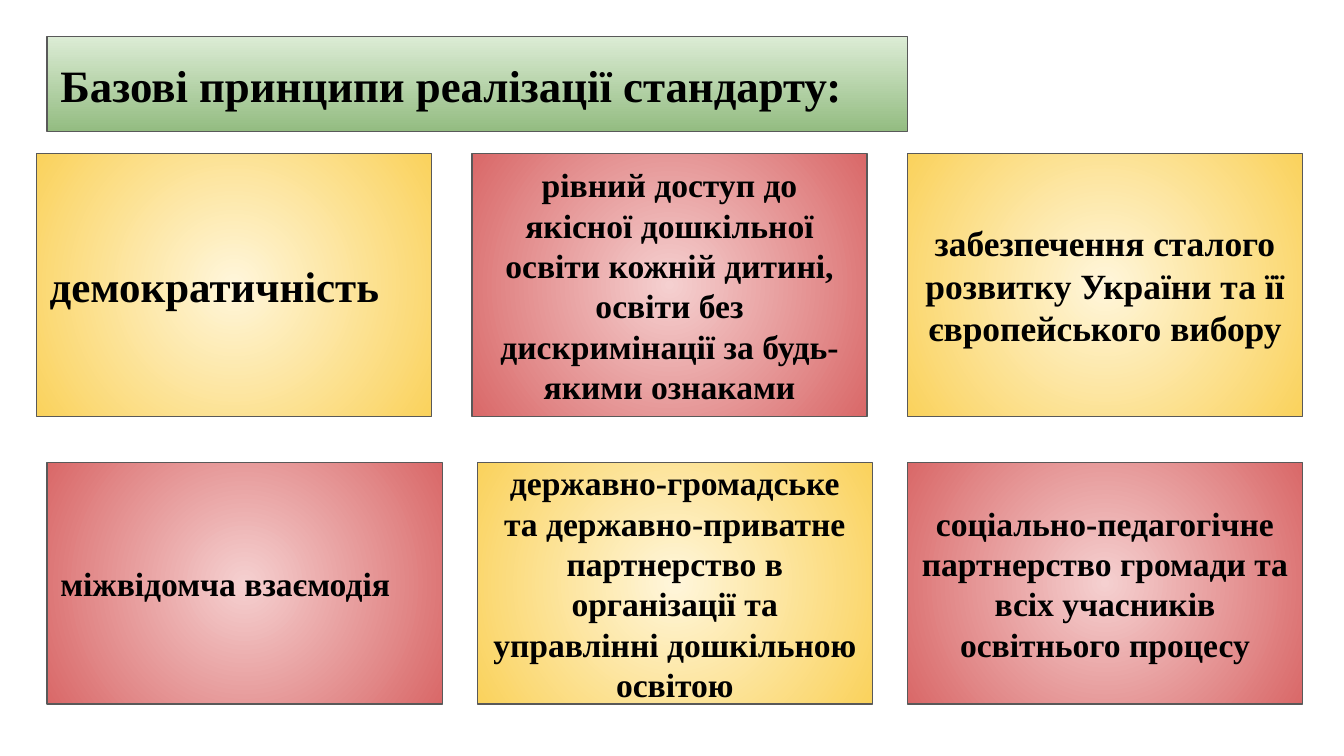
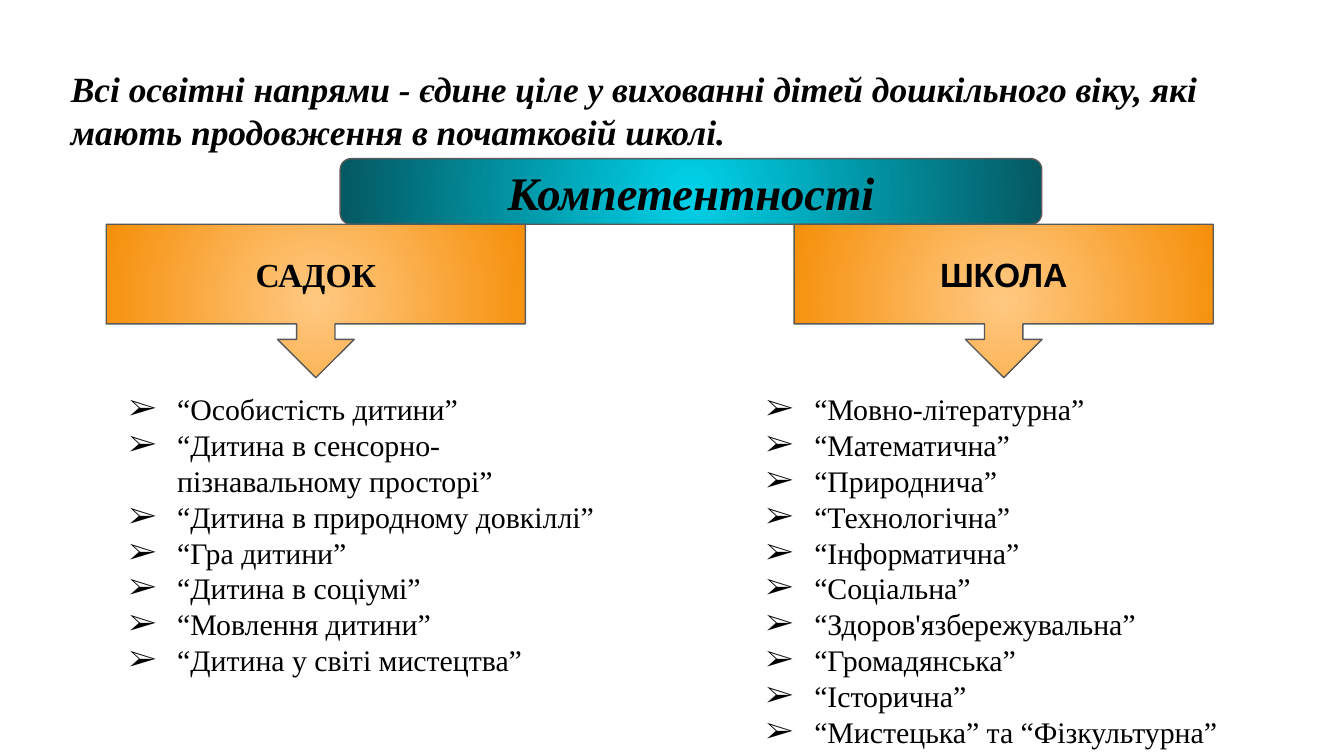
from dataclasses import dataclass

from lxml import etree
from pptx import Presentation
from pptx.dml.color import RGBColor
from pptx.enum.shapes import MSO_SHAPE
from pptx.enum.text import MSO_ANCHOR, MSO_AUTO_SIZE, PP_ALIGN
from pptx.oxml.ns import qn
from pptx.util import Cm, Pt

RECTANGLE = MSO_SHAPE.RECTANGLE
ROUNDED = MSO_SHAPE.ROUNDED_RECTANGLE
CALLOUT = MSO_SHAPE.DOWN_ARROW_CALLOUT
LEFT, CENTER = PP_ALIGN.LEFT, PP_ALIGN.CENTER
TOP, MIDDLE = MSO_ANCHOR.TOP, MSO_ANCHOR.MIDDLE
FIXED, GROW = MSO_AUTO_SIZE.NONE, MSO_AUTO_SIZE.SHAPE_TO_FIT_TEXT

SERIF, SANS = "Times New Roman", "Arial"
BLACK = RGBColor(0x00, 0x00, 0x00)
OUTLINE = RGBColor(0x59, 0x59, 0x59)
TITLE_ONLY = 5
INSET = Cm(0.25)


@dataclass(frozen=True)
class Gradient:
    start: RGBColor
    end: RGBColor
    radial: bool = True


GREEN = Gradient(RGBColor(0xDC, 0xEC, 0xD5), RGBColor(0x93, 0xBC, 0x81), radial=False)
YELLOW = Gradient(RGBColor(0xFF, 0xF6, 0xDB), RGBColor(0xFA, 0xD2, 0x5C))
RED = Gradient(RGBColor(0xF5, 0xD0, 0xD0), RGBColor(0xD9, 0x68, 0x68))
TEAL = Gradient(RGBColor(0x00, 0xD2, 0xE9), RGBColor(0x04, 0x59, 0x62))
ORANGE = Gradient(RGBColor(0xFF, 0xC9, 0x82), RGBColor(0xF5, 0x8F, 0x09))


@dataclass(frozen=True)
class Frame:
    """Position and size in centimetres."""
    left: float
    top: float
    width: float
    height: float

    def lengths(self) -> tuple:
        return Cm(self.left), Cm(self.top), Cm(self.width), Cm(self.height)


@dataclass(frozen=True)
class TextStyle:
    size: float
    font: str = SERIF
    bold: bool = True
    italic: bool = False
    align: PP_ALIGN = CENTER


@dataclass(frozen=True)
class Principle:
    text: str
    size: float = 18
    align: PP_ALIGN = CENTER


@dataclass(frozen=True)
class PrincipleRow:
    left: float
    top: float
    height: float
    step: float
    fills: tuple
    principles: tuple


@dataclass(frozen=True)
class Stage:
    """A callout with the list of fields below it."""
    name: str
    font: str
    callout_left: float
    list_frame: Frame
    fields: tuple


PRINCIPLE_WIDTH = 7.47
PRINCIPLE_ROWS = (
    PrincipleRow(0.69, 2.9, 4.98, 8.23, (YELLOW, RED, YELLOW), (
        Principle("демократичність", 23, LEFT),
        Principle("рівний доступ до якісної дошкільної освіти кожній дитині, "
                  "освіти без дискримінації за будь-якими ознаками"),
        Principle("забезпечення сталого розвитку України та її "
                  "європейського вибору", 19),
    )),
    PrincipleRow(0.89, 8.74, 4.57, 8.13, (RED, YELLOW, RED), (
        Principle("міжвідомча взаємодія", align=LEFT),
        Principle("державно-громадське та державно-приватне партнерство в "
                  "організації та управлінні дошкільною освітою"),
        Principle("соціально-педагогічне партнерство громади та всіх "
                  "учасників освітнього процесу"),
    )),
)

STAGES = (
    Stage("САДОК", SERIF, 2.01, Frame(1.83, 7.14, 10.21, 6.68), (
        "“Особистість дитини”",
        "“Дитина в сенсорно-пізнавальному просторі”",
        "“Дитина в природному довкіллі”",
        "“Гра дитини”",
        "“Дитина в соціумі”",
        "“Мовлення дитини”",
        "“Дитина у світі мистецтва”",
    )),
    Stage("ШКОЛА", SANS, 15.01, Frame(13.87, 7.14, 11.2, 7.37), (
        "“Мовно-літературна”",
        "“Математична”",
        "“Природнича”",
        "“Технологічна”",
        "“Інформатична”",
        "“Соціальна”",
        "“Здоров'язбережувальна”",
        "“Громадянська”",
        "“Історична”",
        "“Мистецька” та “Фізкультурна”",
    )),
)


def paint(shape, gradient: Gradient) -> None:
    """Give a shape its gradient and the common thin outline."""
    shape.fill.gradient()
    for stop, color in zip(shape.fill.gradient_stops, (gradient.start, gradient.end)):
        stop.color.rgb = color
    if gradient.radial:
        fill = shape._element.spPr.find(qn("a:gradFill"))
        fill.remove(fill.find(qn("a:lin")))
        circle = etree.SubElement(fill, qn("a:path"), {"path": "circle"})
        etree.SubElement(circle, qn("a:fillToRect"), dict.fromkeys("ltrb", "50000"))
    else:
        shape.fill.gradient_angle = 270
    shape.line.color.rgb = OUTLINE
    shape.line.width = Pt(0.75)


def add_bullet(para) -> None:
    properties = para._p.get_or_add_pPr()
    properties.set("marL", str(Cm(1.27)))
    properties.set("indent", str(Cm(-0.91)))
    color = etree.SubElement(properties, qn("a:buClr"))
    etree.SubElement(color, qn("a:srgbClr"), {"val": str(BLACK)})
    etree.SubElement(properties, qn("a:buFont"), {"typeface": SERIF})
    etree.SubElement(properties, qn("a:buChar"), {"char": "➢"})


def write(shape, lines: tuple, style: TextStyle, anchor: MSO_ANCHOR = MIDDLE,
          auto_size: MSO_AUTO_SIZE = FIXED, bulleted: bool = False) -> None:
    frame = shape.text_frame
    frame.word_wrap = True
    frame.auto_size = auto_size
    frame.vertical_anchor = anchor
    frame.margin_left = frame.margin_right = INSET
    frame.margin_top = frame.margin_bottom = INSET
    for index, line in enumerate(lines):
        para = frame.add_paragraph() if index else frame.paragraphs[0]
        para.alignment = style.align
        if bulleted:
            add_bullet(para)
        span = para.add_run()
        span.text = line
        span.font.name = style.font
        span.font.size = Pt(style.size)
        span.font.bold = style.bold
        span.font.italic = style.italic
        span.font.color.rgb = BLACK


def add_box(page, kind: MSO_SHAPE, frame: Frame, gradient: Gradient,
            text: str, style: TextStyle):
    box = page.shapes.add_shape(kind, *frame.lengths())
    box.shadow.inherit = False
    paint(box, gradient)
    write(box, (text,), style)
    return box


def add_titled_page(deck, frame: Frame, text: str, style: TextStyle,
                    anchor: MSO_ANCHOR):
    page = deck.slides.add_slide(deck.slide_layouts[TITLE_ONLY])
    title = page.shapes.title
    title.left, title.top, title.width, title.height = frame.lengths()
    write(title, (text,), style, anchor)
    return page


def add_principles_page(deck) -> None:
    page = add_titled_page(deck, Frame(0.89, 0.69, 16.26, 1.8),
                           "Базові принципи реалізації стандарту:",
                           TextStyle(24, align=LEFT), MIDDLE)
    paint(page.shapes.title, GREEN)
    for row in PRINCIPLE_ROWS:
        for column, (principle, fill) in enumerate(zip(row.principles, row.fills)):
            frame = Frame(row.left + column * row.step, row.top,
                          PRINCIPLE_WIDTH, row.height)
            add_box(page, RECTANGLE, frame, fill, principle.text,
                    TextStyle(principle.size, align=principle.align))


def add_competences_page(deck) -> None:
    page = add_titled_page(deck, Frame(1.09, 1.02, 23.29, 2.87),
                           "Всі освітні напрями - єдине ціле у вихованні дітей "
                           "дошкільного віку, які мають продовження в початковій школі.",
                           TextStyle(19, italic=True, align=LEFT), TOP)
    add_box(page, ROUNDED, Frame(6.43, 3, 13.26, 1.24), TEAL,
            "Компетентності", TextStyle(25, italic=True))
    for stage in STAGES:
        add_box(page, CALLOUT, Frame(stage.callout_left, 4.24, 7.92, 2.9), ORANGE,
                stage.name, TextStyle(18, font=stage.font))
        fields = page.shapes.add_textbox(*stage.list_frame.lengths())
        write(fields, stage.fields, TextStyle(16, bold=False, align=LEFT),
              TOP, GROW, bulleted=True)


def main() -> None:
    deck = Presentation()
    deck.slide_width, deck.slide_height = Cm(25.4), Cm(14.29)
    add_principles_page(deck)
    add_competences_page(deck)
    deck.save("out.pptx")


if __name__ == "__main__":
    main()
